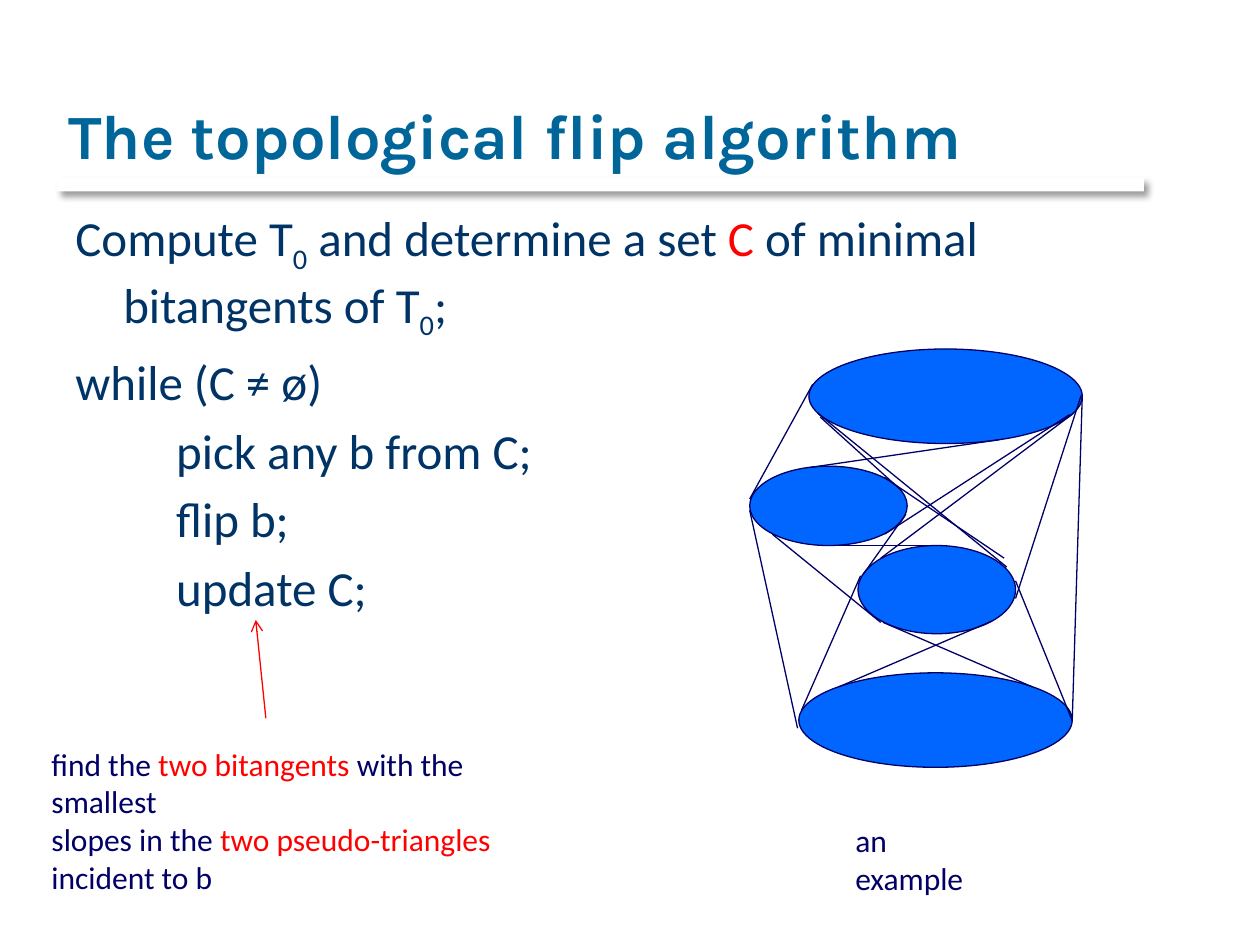
from lxml import etree
from pptx import Presentation
from pptx.dml.color import RGBColor
from pptx.enum.shapes import MSO_CONNECTOR, MSO_SHAPE
from pptx.enum.text import MSO_ANCHOR, PP_ALIGN
from pptx.oxml import parse_xml
from pptx.oxml.ns import qn
from pptx.util import Inches, Pt

LINE, OVAL, RECT = MSO_CONNECTOR.STRAIGHT, MSO_SHAPE.OVAL, MSO_SHAPE.RECTANGLE
LOW, LEFT = MSO_ANCHOR.BOTTOM, PP_ALIGN.LEFT
HUES = {"title": "006699", "body": "003366", "note": "000066",
        "red": "FF0000", "oval": "0066FF", "white": "FFFFFF"}
COLS, ROWS = 100, 75
WIDE, HIGH = Inches(10), Inches(7.5)
SHADE = ('<a:effectLst xmlns:a="http://schemas.openxmlformats.org/drawingml/2006/main">'
         '<a:outerShdw blurRad="50800" dist="38100" dir="2700000" algn="tl">'
         '<a:srgbClr val="000000"><a:alpha val="40000"/></a:srgbClr>'
         '</a:outerShdw></a:effectLst>')

OVALS = [(5.2, 0.7, 21.7, 7.5), (4.4, 26.4, 21.7, 7.5),
         (0.5, 10, 12.5, 6.3), (9.1, 16.3, 12.5, 7)]
TANGENTS = [
    (26.1, 30.2, 26.9, 4.3), (5.5, 3.5, 0.5, 12.6), (5.3, 10.1, 20.3, 7.9),
    (11.2, 15.4, 25.9, 5.9), (10.9, 17.3, 26.2, 5.8), (21.6, 20.5, 26.8, 4.4),
    (7.6, 27.5, 19.7, 22.3), (4.3, 30.8, 0.5, 13.5), (4.6, 29.4, 9.3, 18.7),
    (6.1, 6.1, 12.4, 11.8), (11.1, 22.4, 22.9, 27.5), (9.5, 18.6, 12.9, 13.8),
    (20.9, 18, 5.9, 5.8), (15.3, 16.3, 6.3, 16.3), (26.1, 30.2, 21.6, 19.1),
    (2.3, 15.4, 10.9, 22.4), (20.7, 17.3, 11.2, 10.9)]
STEPS = [
    [("Compute T", "body"), ("0", "sub"), (" and determine a set ", "body"), ("C", "red"),
     (" of minimal bitangents of T", "body"), ("0", "sub"), (";", "body")],
    [("while (C ≠ ø)", "body")],
    [("pick any b from C;", "body")],
    [("flip b;", "body")],
    [("update C;", "body")]]
NOTE = [
    [("find the ", "note"), ("two bitangents ", "red"), ("with the smallest", "note")],
    [("slopes in the ", "note"), ("two pseudo-triangles", "red")],
    [("incident to b", "note")]]


def hue(name):
    """Return the named colour."""
    return RGBColor.from_string(HUES[name])


def grid(*cells):
    """Turn alternating columns and rows into lengths."""
    return [int(n * (HIGH / ROWS if i % 2 else WIDE / COLS)) for i, n in enumerate(cells)]


def style(run, name, size, font="Calibri"):
    """Set the font of a run."""
    run.font.name, run.font.size = font, Pt(size)
    run.font.color.rgb = hue(name)


def stroke(slide, ends, name):
    """Draw a thin line between two grid points."""
    line = slide.shapes.add_connector(LINE, *grid(*ends))
    line.line.color.rgb, line.line.width = hue(name), Pt(0.75)
    etree.SubElement(line._element.spPr, qn("a:effectLst"))
    return line


def text(slide, box, rows, size):
    """Place a text box of coloured runs and return its paragraphs."""
    frame = slide.shapes.add_textbox(*grid(*box)).text_frame
    frame.word_wrap = True
    for i, row in enumerate(rows):
        para = frame.add_paragraph() if i else frame.paragraphs[0]
        for words, name in row:
            run = para.add_run()
            run.text = words
            style(run, "body" if name == "sub" else name, size)
            if name == "sub":
                run.font._element.set("baseline", "-25000")
    return frame.paragraphs


def head(slide, box):
    """Place the title and the shaded rule below it."""
    x, y, w, h = box
    bar = slide.shapes.add_shape(RECT, *grid(x + 0.1, y + h - 0.1, w + 1.3, 1.1))
    bar.fill.solid()
    bar.fill.fore_color.rgb = hue("white")
    bar.line.fill.background()
    bar._element.spPr.append(parse_xml(SHADE))
    title = slide.shapes.title
    title.left, title.top, title.width, title.height = grid(*box)
    frame = title.text_frame
    frame.text = "The topological flip algorithm"
    frame.vertical_anchor = LOW
    para = frame.paragraphs[0]
    para.alignment = LEFT
    run = para.runs[0]
    style(run, "title", 36, "Karla")
    run.font.bold = True
    run.font._element.set("spc", "10")


def code(slide, box):
    """Place the steps of the algorithm, with the loop indented."""
    for i, para in enumerate(text(slide, box, STEPS, 28)):
        para.space_before = Pt(5.6)
        left, shift = (0.38, -0.38) if i < 2 else (0.8, 0)
        props = para._p.get_or_add_pPr()
        props.set("marL", str(Inches(left)))
        props.set("indent", str(Inches(shift)))


def graph(slide, box):
    """Draw the ovals, their bitangents and the caption."""
    x, y, w, h = box
    for a, b, c, d in OVALS:
        oval = slide.shapes.add_shape(OVAL, *grid(x + a, y + b, c, d))
        oval.shadow.inherit = False
        oval.fill.solid()
        oval.fill.fore_color.rgb = hue("oval")
        oval.line.color.rgb, oval.line.width = hue("note"), Pt(0.75)
    for a, b, c, d in TANGENTS:
        stroke(slide, (x + a, y + b, x + c, y + d), "note")
    text(slide, (x + 7.9, y + h, w / 2, 4), [[("an example", "note")]], 18)


def note(slide, box):
    """Place the remark and the arrow to the last step."""
    x, y, w, h = box
    text(slide, box, NOTE, 18)
    arrow = stroke(slide, (x + 18, y - 1.6, x + 17.2, y - 9.4), "red")
    etree.SubElement(arrow.line._get_or_add_ln(), qn("a:tailEnd"), type="arrow")


def main():
    """Build and save the slide."""
    deck = Presentation()
    deck.slide_width, deck.slide_height = WIDE, HIGH
    slide = deck.slides.add_slide(deck.slide_layouts[5])
    head(slide, (4.4, 1.7, 85, 12.5))
    code(slide, (5, 16, 89.5, 23.8))
    graph(slide, (59, 27, 27.2, 37.7))
    note(slide, (3.1, 58.6, 43.5, 10.1))
    deck.save("out.pptx")


if __name__ == "__main__":
    main()
